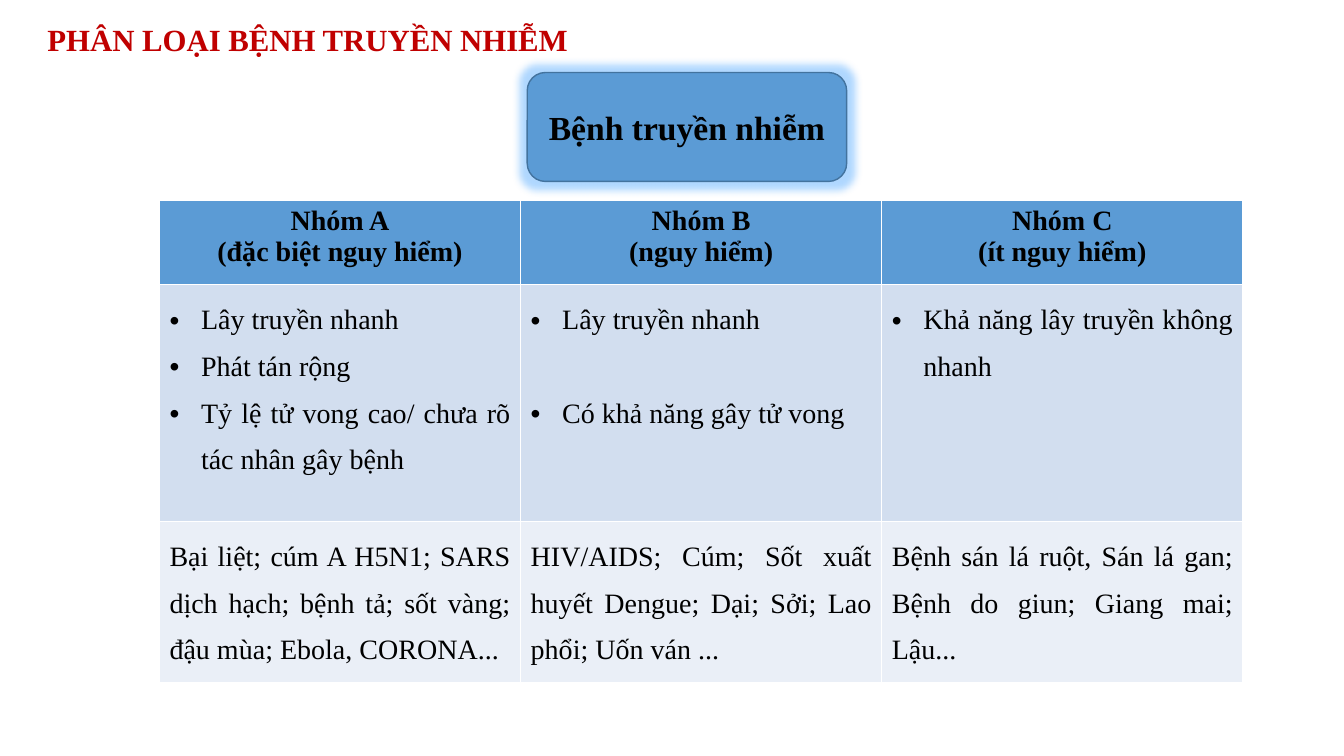
from lxml import etree
from pptx import Presentation
from pptx.dml.color import RGBColor
from pptx.enum.shapes import MSO_SHAPE
from pptx.enum.text import MSO_ANCHOR, PP_ALIGN
from pptx.oxml.ns import qn
from pptx.util import Pt

ROUNDED = MSO_SHAPE.ROUNDED_RECTANGLE
MIDDLE = MSO_ANCHOR.MIDDLE
LEFT, CENTER, JUSTIFY = PP_ALIGN.LEFT, PP_ALIGN.CENTER, PP_ALIGN.JUSTIFY

# Content
TITLE = "PHÂN LOẠI BỆNH TRUYỀN NHIỄM"
TOPIC = "Bệnh truyền nhiễm"
GROUPS = [
    {
        "heading": ["Nhóm A", "(đặc biệt nguy hiểm)"],
        "traits": ["Lây truyền nhanh", "Phát tán rộng",
                   "Tỷ lệ tử vong cao/ chưa rõ tác nhân gây bệnh"],
        "diseases": "Bại liệt; cúm A H5N1; SARS dịch hạch; bệnh tả; sốt vàng; "
                    "đậu mùa; Ebola, CORONA...",
    },
    {
        "heading": ["Nhóm B", "(nguy hiểm)"],
        "traits": ["Lây truyền nhanh", "Có khả năng gây tử vong"],
        "trait_gap": 33.3,
        "diseases": "HIV/AIDS; Cúm; Sốt xuất huyết Dengue; Dại; Sởi; "
                    "Lao phổi; Uốn ván ...",
    },
    {
        "heading": ["Nhóm C", "(ít nguy hiểm)"],
        "traits": ["Khả năng lây truyền không nhanh"],
        "diseases": "Bệnh sán lá ruột, Sán lá gan; Bệnh do giun; Giang mai; Lậu...",
    },
]

THEME = {
    "font": "Times New Roman",
    "title": "C00000", "ink": "000000", "border": "FFFFFF",
    "blue": "5B9BD5", "outline": "43739E", "glow": "399DFF",
    "traits": "D2DEEF", "diseases": "EAEFF7",
    "title_size": 22, "topic_size": 24, "table_size": 20,
}

# Layout in points
SLIDE_SIZE = (960, 540)
TITLE_BOX = (26.8, 13, 720, 33)
TOPIC_BOX = (376.6, 51.8, 228.2, 77.8)
TABLE_LEFT, TABLE_TOP, COLUMN_WIDTH = 113.9, 143.3, 258
ROW_HEIGHTS = [59.8, 169.2, 104.4]
BULLET_INDENT = 22.5


def color(name):
    return RGBColor.from_string(THEME[name])


def write(frame, lines, size, ink="ink", bold=False, align=LEFT, spacing=None,
          bulleted=False, gap=0):
    for index, line in enumerate(lines):
        paragraph = frame.paragraphs[0] if index == 0 else frame.add_paragraph()
        paragraph.alignment = align
        if spacing:
            paragraph.line_spacing = spacing
        if index and gap:
            paragraph.space_before = Pt(gap)
        if bulleted:
            add_bullet(paragraph)
        run = paragraph.add_run()
        run.text = line
        run.font.name = THEME["font"]
        run.font.size = Pt(THEME[size])
        run.font.bold = bold
        run.font.color.rgb = color(ink)


def add_bullet(paragraph):
    properties = paragraph._p.get_or_add_pPr()
    properties.set("marL", str(Pt(BULLET_INDENT)))
    properties.set("indent", str(-Pt(BULLET_INDENT)))
    etree.SubElement(properties, qn("a:buFont"), typeface="Arial")
    etree.SubElement(properties, qn("a:buChar"), char="•")


def style_cell(cell, fill):
    properties = cell._tc.get_or_add_tcPr()
    for side in ("lnL", "lnR", "lnT", "lnB"):
        border = etree.SubElement(properties, qn("a:" + side), w=str(Pt(1)))
        solid = etree.SubElement(border, qn("a:solidFill"))
        etree.SubElement(solid, qn("a:srgbClr"), val=THEME["border"])
    cell.fill.solid()
    cell.fill.fore_color.rgb = color(fill)


def add_glow(shape, radius):
    effects = shape._element.spPr.find(qn("a:effectLst"))
    glow = etree.SubElement(effects, qn("a:glow"), rad=str(Pt(radius)))
    tint = etree.SubElement(glow, qn("a:srgbClr"), val=THEME["glow"])
    etree.SubElement(tint, qn("a:alpha"), val="40000")


def main():
    deck = Presentation()
    deck.slide_width, deck.slide_height = map(Pt, SLIDE_SIZE)
    slide = deck.slides.add_slide(deck.slide_layouts[6])

    # Title
    title = slide.shapes.add_textbox(*map(Pt, TITLE_BOX)).text_frame
    title.word_wrap = True
    title.vertical_anchor = MIDDLE
    write(title, [TITLE], "title_size", ink="title", bold=True, spacing=0.9)

    # Glowing topic box
    topic = slide.shapes.add_shape(ROUNDED, *map(Pt, TOPIC_BOX))
    topic.shadow.inherit = False
    add_glow(topic, 11)
    topic.fill.solid()
    topic.fill.fore_color.rgb = color("blue")
    topic.line.color.rgb = color("outline")
    topic.line.width = Pt(1)
    topic.text_frame.word_wrap = True
    topic.text_frame.vertical_anchor = MIDDLE
    write(topic.text_frame, [TOPIC], "topic_size", bold=True, align=CENTER)

    # Table: one column per group
    table = slide.shapes.add_table(
        len(ROW_HEIGHTS), len(GROUPS), Pt(TABLE_LEFT), Pt(TABLE_TOP),
        Pt(COLUMN_WIDTH * len(GROUPS)), Pt(sum(ROW_HEIGHTS))).table
    for row, height in zip(table.rows, ROW_HEIGHTS):
        row.height = Pt(height)
    for column, group in enumerate(GROUPS):
        table.columns[column].width = Pt(COLUMN_WIDTH)
        heading, traits, diseases = (
            table.cell(row, column) for row in range(len(ROW_HEIGHTS)))
        style_cell(heading, "blue")
        write(heading.text_frame, group["heading"], "table_size",
              bold=True, align=CENTER)
        style_cell(traits, "traits")
        write(traits.text_frame, group["traits"], "table_size", align=JUSTIFY,
              spacing=1.5, bulleted=True, gap=group.get("trait_gap", 0))
        style_cell(diseases, "diseases")
        write(diseases.text_frame, [group["diseases"]], "table_size",
              align=JUSTIFY, spacing=1.5)

    deck.save("out.pptx")


if __name__ == "__main__":
    main()
